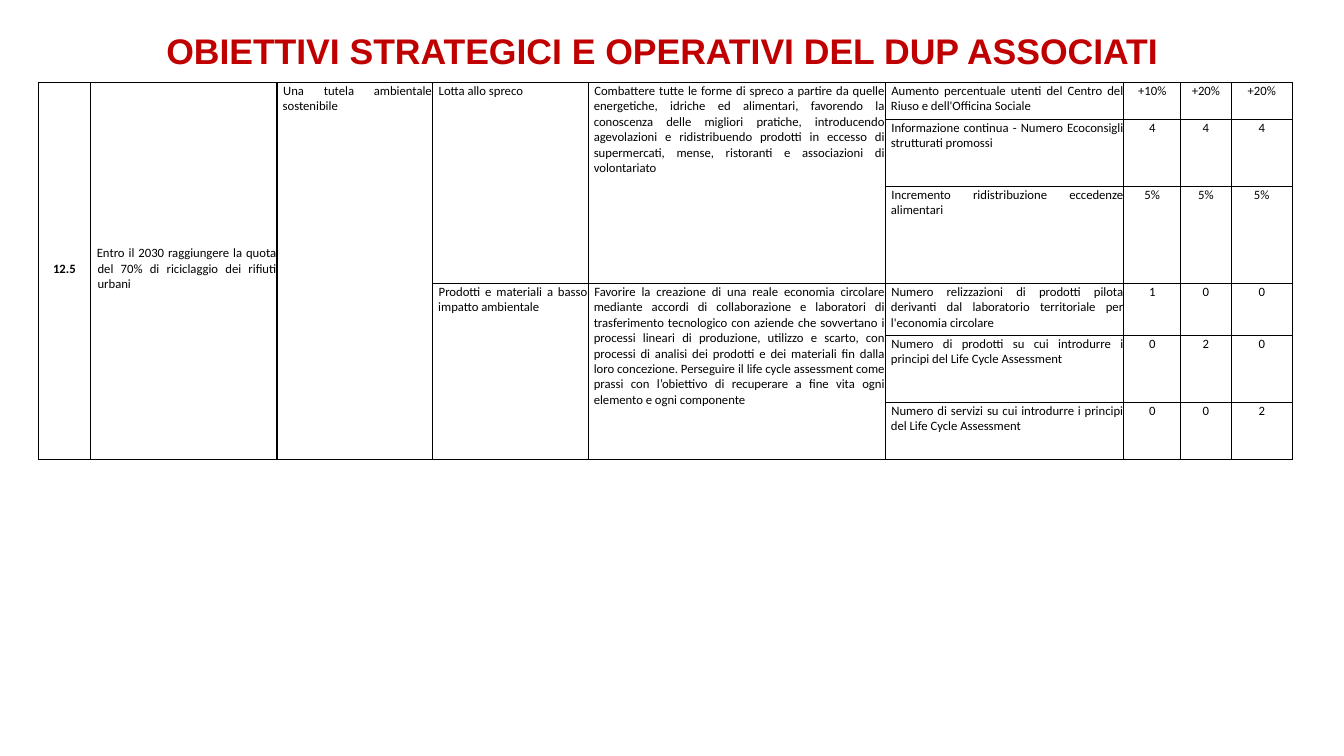
from lxml.etree import SubElement
from pptx import Presentation
from pptx.dml.color import RGBColor
from pptx.enum.text import MSO_ANCHOR, PP_ALIGN
from pptx.oxml.ns import qn
from pptx.util import Pt


def color(hex_string):
    return RGBColor.from_string(hex_string)


def add_borders(cell, hex_string, width):
    properties = cell._tc.get_or_add_tcPr()
    for position, side in enumerate(("lnL", "lnR", "lnT", "lnB")):
        line = SubElement(properties, qn(f"a:{side}"), w=str(Pt(width)))
        fill = SubElement(line, qn("a:solidFill"))
        SubElement(fill, qn("a:srgbClr"), val=hex_string)
        properties.remove(line)
        properties.insert(position, line)  # borders precede the cell fill


prs = Presentation()
prs.slide_width, prs.slide_height = Pt(1058.4), Pt(595.44)
slide = prs.slides.add_slide(prs.slide_layouts[6])

# Title
title = slide.shapes.add_textbox(Pt(0.7), Pt(2.2), Pt(1057), Pt(52)).text_frame
title.word_wrap = True
title.margin_right = Pt(22.8)
heading = title.paragraphs[0]
heading.text = "OBIETTIVI STRATEGICI E OPERATIVI DEL DUP ASSOCIATI"
heading.alignment = PP_ALIGN.CENTER
heading.line_spacing = 1.5
heading.space_after = Pt(6)
heading_font = heading.runs[0].font
heading_font.name, heading_font.size, heading_font.bold = "Arial", Pt(28), True
heading_font.color.rgb = color("C00000")

# Objectives: (row, column) of each text, with the number of rows it covers
objectives = [
    (0, 0, 6, "12.5"),
    (0, 1, 6, "Entro il 2030 raggiungere la quota del 70% di riciclaggio dei rifiuti urbani"),
    (0, 2, 6, "Una tutela ambientale sostenibile"),
    (0, 3, 3, "Lotta allo spreco"),
    (0, 4, 3, "Combattere tutte le forme di spreco a partire da quelle energetiche, idriche ed "
              "alimentari, favorendo la conoscenza delle migliori pratiche, introducendo "
              "agevolazioni e ridistribuendo prodotti in eccesso di supermercati, mense, "
              "ristoranti e associazioni di volontariato"),
    (3, 3, 3, "Prodotti e materiali a basso impatto ambientale"),
    (3, 4, 3, "Favorire la creazione di una reale economia circolare mediante accordi di "
              "collaborazione e laboratori di trasferimento tecnologico con aziende che "
              "sovvertano i processi lineari di produzione, utilizzo e scarto, con processi di "
              "analisi dei prodotti e dei materiali fin dalla loro concezione. Perseguire il "
              "life cycle assessment come prassi con l’obiettivo di recuperare a fine vita "
              "ogni elemento e ogni componente"),
]

# Indicators with their three yearly targets, one per row
indicators = [
    ("Aumento percentuale utenti del Centro del Riuso e dell'Officina Sociale",
     "+10%", "+20%", "+20%"),
    ("Informazione continua - Numero Ecoconsigli strutturati promossi", "4", "4", "4"),
    ("Incremento ridistribuzione eccedenze alimentari", "5%", "5%", "5%"),
    ("Numero relizzazioni di prodotti pilota derivanti dal laboratorio territoriale per "
     "l'economia circolare", "1", "0", "0"),
    ("Numero di prodotti su cui introdurre i principi del Life Cycle Assessment",
     "0", "2", "0"),
    ("Numero di servizi su cui introdurre i principi del Life Cycle Assessment",
     "0", "0", "2"),
]

# Table grid
column_widths = [41, 147, 122.5, 122.5, 234, 188, 44.5, 40, 48]
row_heights = [29.2, 52.8, 76.4, 41, 52.8, 44.4]
plan = slide.shapes.add_table(
    len(row_heights), len(column_widths), Pt(30.2), Pt(65),
    Pt(sum(column_widths)), Pt(sum(row_heights))).table
plan.first_row = plan.horz_banding = False
for column, width in zip(plan.columns, column_widths):
    column.width = Pt(width)
for row, height in zip(plan.rows, row_heights):
    row.height = Pt(height)

# Cell contents
for row, column, span, text in objectives:
    plan.cell(row, column).merge(plan.cell(row + span - 1, column))
    plan.cell(row, column).text_frame.text = text
for row, entries in enumerate(indicators):
    for column, text in enumerate(entries, start=5):
        plan.cell(row, column).text_frame.text = text

# Cell format
for row in range(len(row_heights)):
    for column in range(len(column_widths)):
        cell = plan.cell(row, column)
        cell.fill.background()
        cell.margin_left = cell.margin_right = cell.margin_top = Pt(0.7)
        cell.margin_bottom = Pt(3.6)
        cell.vertical_anchor = MSO_ANCHOR.MIDDLE if column < 2 else MSO_ANCHOR.TOP
        add_borders(cell, "000000", 1)
        paragraph = cell.text_frame.paragraphs[0]
        if column == 0 or column > 5:
            paragraph.alignment = PP_ALIGN.CENTER
        else:
            paragraph.alignment = PP_ALIGN.JUSTIFY
            indent = paragraph._p.get_or_add_pPr()
            indent.set("marL", str(Pt(5 if column == 1 else 3.8)))
            indent.set("indent", str(Pt(-0.6 if column == 1 else 0.4)))
        for run in paragraph.runs:
            run.font.name, run.font.size = "Calibri", Pt(10)
            run.font.bold = column == 0
            run.font.color.rgb = color("000000")

prs.save("out.pptx")
